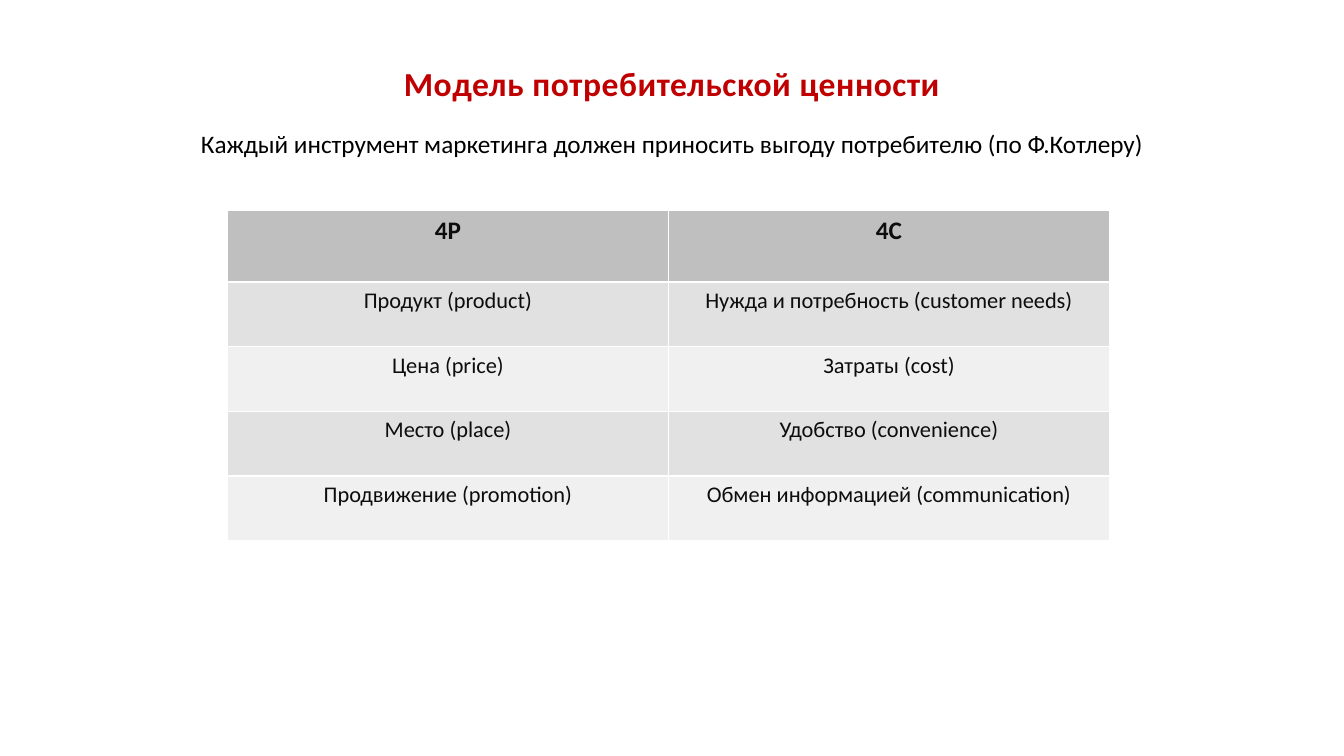
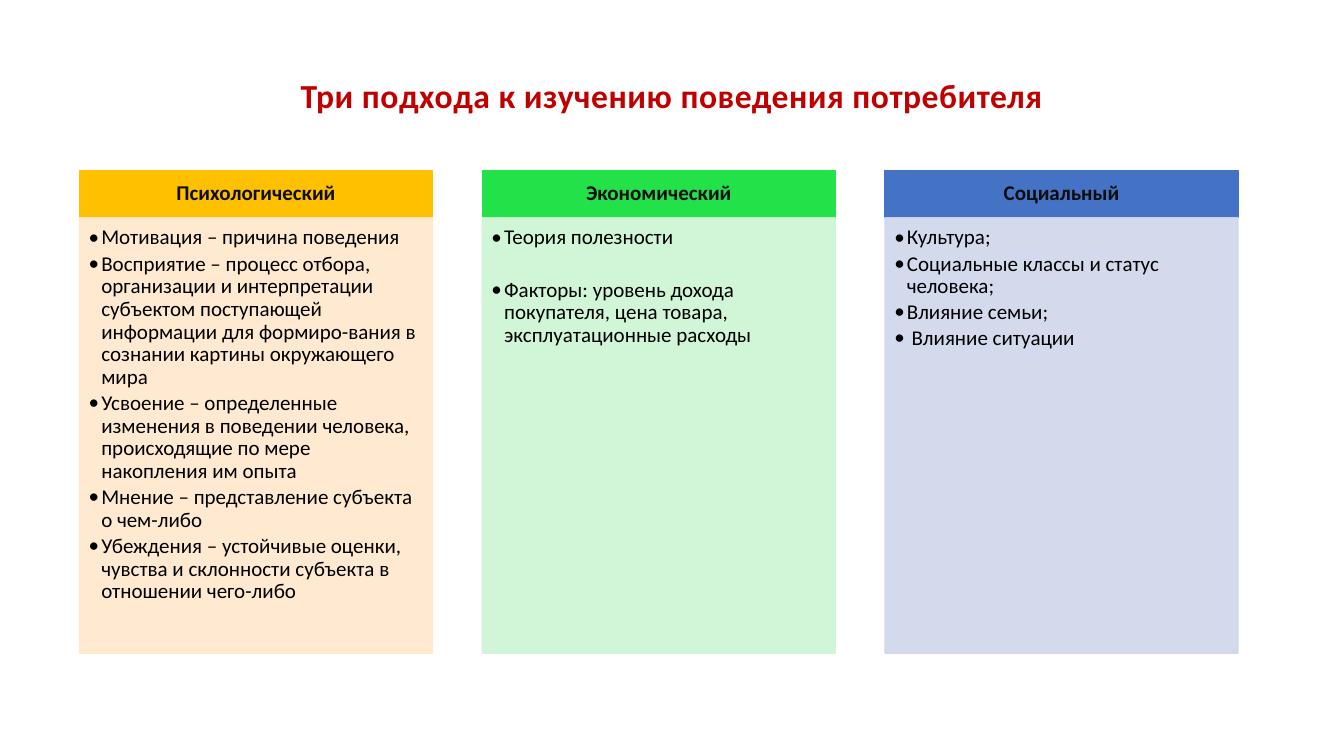
"""Two marketing slides: the 4P and 4C table and three approaches to consumer behaviour."""
from lxml.etree import SubElement
from pptx import Presentation
from pptx.dml.color import RGBColor
from pptx.enum.shapes import MSO_SHAPE
from pptx.enum.text import MSO_ANCHOR, MSO_AUTO_SIZE, PP_ALIGN
from pptx.oxml.ns import qn
from pptx.util import Pt

FONT = "Calibri"
RED = RGBColor(0xC0, 0x00, 0x00)
BLACK = RGBColor(0x00, 0x00, 0x00)
INK = RGBColor(0x0D, 0x0D, 0x0D)
WHITE = RGBColor(0xFF, 0xFF, 0xFF)
HEADER_GRAY = RGBColor(0xBF, 0xBF, 0xBF)
BAND_GRAYS = (RGBColor(0xE1, 0xE1, 0xE1), RGBColor(0xF0, 0xF0, 0xF0))
AMBER = RGBColor(0xFF, 0xC0, 0x00)
PEACH = RGBColor(0xFF, 0xE8, 0xCC)
GREEN = RGBColor(0x23, 0xE1, 0x48)
MINT = RGBColor(0xCC, 0xF6, 0xD3)
BLUE = RGBColor(0x44, 0x72, 0xC4)
LAVENDER = RGBColor(0xCF, 0xD6, 0xEA)

TABLE_ROWS = (
    ("4Р", "4С"),
    ("Продукт (product)", "Нужда и потребность (customer needs)"),
    ("Цена (price)", "Затраты (cost)"),
    ("Место (place)", "Удобство (convenience)"),
    ("Продвижение (promotion)", "Обмен информацией (communication)"),
)
ITEM_GAP = 2.4
WIDE_GAP = 21
APPROACHES = (
    ("Психологический", AMBER, PEACH, ITEM_GAP, (
        "Мотивация – причина поведения",
        "Восприятие – процесс отбора, организации и интерпретации субъектом "
        "поступающей информации для формиро-вания в сознании картины окружающего мира",
        "Усвоение – определенные изменения в поведении человека, "
        "происходящие по мере накопления им опыта",
        "Мнение – представление субъекта о чем-либо",
        "Убеждения – устойчивые оценки, чувства и склонности субъекта "
        "в отношении чего-либо")),
    ("Экономический", GREEN, MINT, WIDE_GAP, (
        "Теория полезности",
        "Факторы: уровень дохода покупателя, цена товара, эксплуатационные расходы")),
    ("Социальный", BLUE, LAVENDER, ITEM_GAP, (
        "Культура;",
        "Социальные классы и статус человека;",
        "Влияние семьи;",
        " Влияние ситуации")),
)


def add_run(p, text, size, color, bold=False):
    """Add a formatted run to a paragraph and return it."""
    r = p.add_run()
    r.text = text
    r.font.name = FONT
    r.font.size = Pt(size)
    r.font.bold = bold
    r.font.color.rgb = color
    return r


def format_paragraph(p, align, space_after=0):
    """Set alignment and the tight line spacing of a paragraph."""
    p.alignment = align
    p.line_spacing = 0.9
    p.space_before = Pt(0)
    p.space_after = Pt(space_after)


def add_title_slide(prs, top, title, subtitle=None):
    """Add a title-only slide with a red title and an optional subtitle."""
    s = prs.slides.add_slide(prs.slide_layouts[5])
    sp = s.shapes.title
    sp.left, sp.top, sp.width, sp.height = Pt(66), Pt(top), Pt(828), Pt(104.4)
    tf = sp.text_frame
    tf.word_wrap = True
    tf.auto_size = MSO_AUTO_SIZE.NONE
    tf.vertical_anchor = MSO_ANCHOR.MIDDLE
    p = tf.paragraphs[0]
    format_paragraph(p, PP_ALIGN.CENTER, 20 if subtitle else 0)
    r = add_run(p, title, 24, RED, True)
    r.font._element.set("spc", "40")
    if subtitle:
        p = tf.add_paragraph()
        format_paragraph(p, PP_ALIGN.CENTER)
        add_run(p, subtitle, 18, BLACK)
    return s


def set_borders(cell):
    """Draw thin white borders on all sides of a cell."""
    tc_pr = cell._tc.get_or_add_tcPr()
    for side in ("a:lnL", "a:lnR", "a:lnT", "a:lnB"):
        ln = SubElement(tc_pr, qn(side), w=str(Pt(1)))
        fill = SubElement(ln, qn("a:solidFill"))
        SubElement(fill, qn("a:srgbClr"), val=str(WHITE))


def add_gray_table(s, rows):
    """Add a two-column table with a header and banded rows."""
    table = s.shapes.add_table(len(rows), 2, Pt(162.5), Pt(150.5), Pt(630), Pt(235.8)).table
    for column in table.columns:
        column.width = Pt(315)
    for i, texts in enumerate(rows):
        is_header = i == 0
        table.rows[i].height = Pt(51 if is_header else 46.2)
        for j, text in enumerate(texts):
            cell = table.cell(i, j)
            set_borders(cell)
            cell.fill.solid()
            cell.fill.fore_color.rgb = HEADER_GRAY if is_header else BAND_GRAYS[(i - 1) % 2]
            p = cell.text_frame.paragraphs[0]
            p.alignment = PP_ALIGN.CENTER
            add_run(p, text, 18 if is_header else 16, INK, is_header)


def add_panel(s, box, color, insets, anchor):
    """Add a filled rectangle and return it."""
    sp = s.shapes.add_shape(MSO_SHAPE.RECTANGLE, *map(Pt, box))
    sp.shadow.inherit = False
    sp.fill.solid()
    sp.fill.fore_color.rgb = color
    sp.line.color.rgb = color
    sp.line.width = Pt(1)
    tf = sp.text_frame
    tf.word_wrap = True
    tf.vertical_anchor = anchor
    tf.margin_left, tf.margin_top, tf.margin_right, tf.margin_bottom = map(Pt, insets)
    return sp


def set_alpha(sp, percent):
    """Make the fill and line of a shape partly transparent."""
    for color in sp._element.spPr.iter(qn("a:srgbClr")):
        SubElement(color, qn("a:alpha"), val=str(percent * 1000))


def add_bullet(p):
    """Give a paragraph a hanging round bullet."""
    p_pr = p._p.get_or_add_pPr()
    p_pr.set("marL", str(Pt(9)))
    p_pr.set("indent", str(-Pt(9)))
    SubElement(p_pr, qn("a:buFont"), typeface=FONT)
    SubElement(p_pr, qn("a:buChar"), char="•")


def add_approach(s, left, heading, head_color, body_color, gap, items):
    """Add a column made of a heading and a bulleted body."""
    head = add_panel(s, (left, 121.7, 252, 33.8), head_color,
                     (8.6, 5, 8.6, 5), MSO_ANCHOR.MIDDLE)
    p = head.text_frame.paragraphs[0]
    format_paragraph(p, PP_ALIGN.CENTER)
    add_run(p, heading, 15, INK, True)

    body = add_panel(s, (left, 155.5, 252, 311), body_color,
                     (6.5, 6.5, 8.6, 9.4), MSO_ANCHOR.TOP)
    set_alpha(body, 90)
    tf = body.text_frame
    for i, item in enumerate(items):
        p = tf.add_paragraph() if i else tf.paragraphs[0]
        add_bullet(p)
        format_paragraph(p, PP_ALIGN.LEFT, gap)
        add_run(p, item, 15, BLACK)


def main():
    """Build and save the presentation."""
    prs = Presentation()
    prs.slide_width, prs.slide_height = Pt(960), Pt(540)

    s = add_title_slide(
        prs, 28.8, "Модель потребительской ценности",
        "Каждый инструмент маркетинга должен приносить выгоду потребителю (по Ф.Котлеру)")
    add_gray_table(s, TABLE_ROWS)

    s = add_title_slide(prs, 17.3, "Три подхода к изучению поведения потребителя")
    for i, approach in enumerate(APPROACHES):
        add_approach(s, 56.9 + 287.7 * i, *approach)

    prs.save("out.pptx")


if __name__ == "__main__":
    main()
